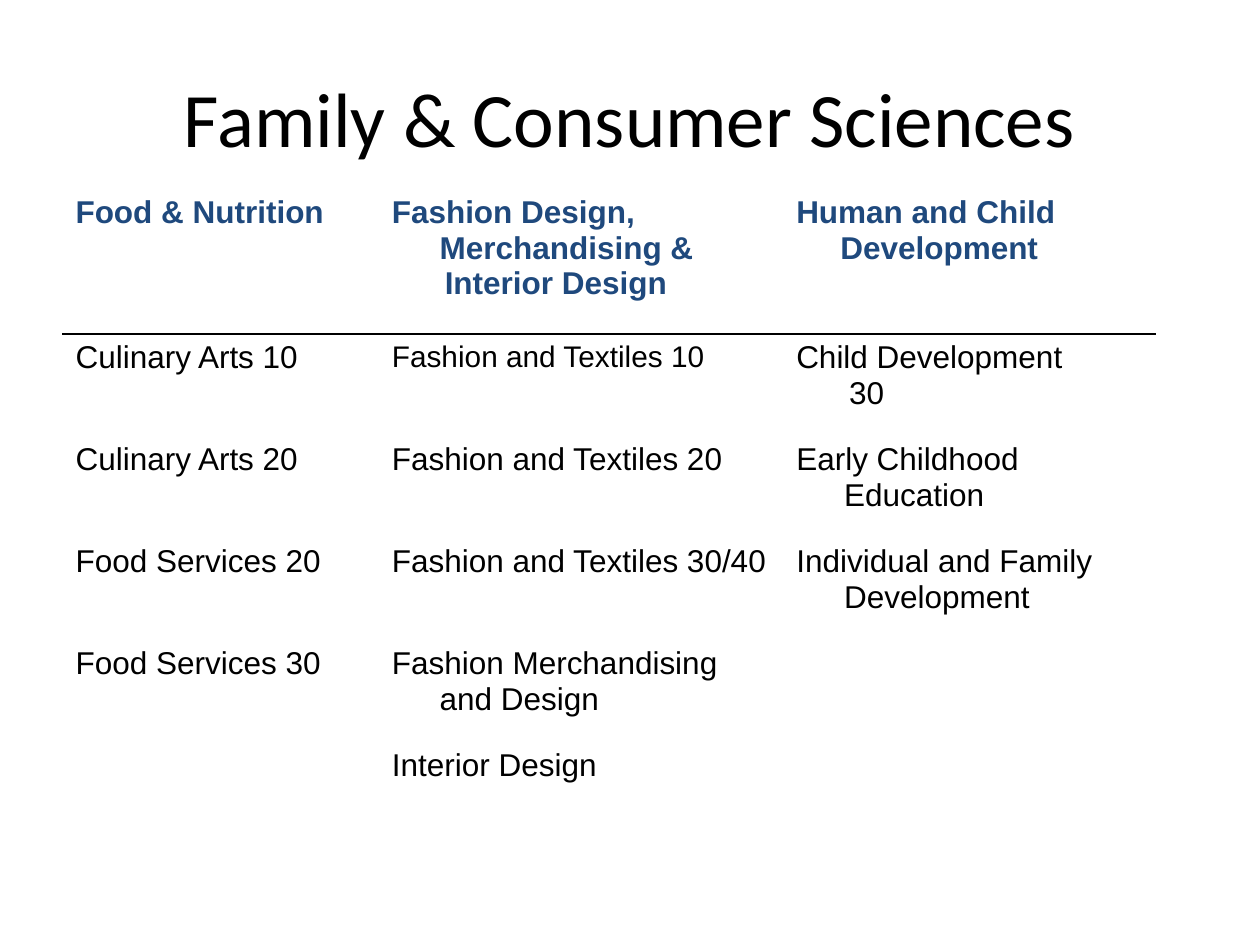
from lxml import etree
from pptx import Presentation
from pptx.dml.color import RGBColor
from pptx.enum.text import MSO_ANCHOR, PP_ALIGN
from pptx.oxml.ns import qn
from pptx.util import Inches, Pt

BLACK = RGBColor(0x00, 0x00, 0x00)
NAVY = RGBColor(0x1F, 0x49, 0x7D)
CENTER, MIDDLE = PP_ALIGN.CENTER, MSO_ANCHOR.MIDDLE

TITLE_ONLY = 5
HANGING = 0.38
TITLE_BOX = (0.5, 0.3, 9, 1.25)
TABLE_BOX = (0.5, 1.5, 8.67, 5)
COLUMN_WIDTHS = (2.51, 3.21, 2.95)
ROW_HEIGHTS = (1.15, 0.81, 0.81, 0.81, 0.81, 0.6)

# A cell is a list of paragraphs: (text, indent of a continuation or None)
COURSES = (
    ([("Food & Nutrition", None)],
     [("Fashion Design, Merchandising &", None), ("Interior Design", 0.42)],
     [("Human and Child", None), ("Development", 0.35)]),
    ([("Culinary Arts 10", None)],
     [("Fashion and Textiles 10", None)],
     [("Child Development", None), ("30", 0.42)]),
    ([("Culinary Arts 20", None)],
     [("Fashion and Textiles 20", None)],
     [("Early Childhood Education", None)]),
    ([("Food Services 20", None)],
     [("Fashion and Textiles 30/40", None)],
     [("Individual and Family Development", None)]),
    ([("Food Services 30", None)],
     [("Fashion Merchandising and Design", None)],
     []),
    ([], [("Interior Design", None)], []),
)
SMALLER_TEXT = {"Fashion and Textiles 10": 17}


def add_run(paragraph, text, font_name, size, color, bold=False):
    run = paragraph.add_run()
    run.text = text
    run.font.name = font_name
    run.font.size = Pt(size)
    run.font.bold = bold
    run.font.color.rgb = color


def set_border(cell, side):
    """Draw a thin black line on one side of a cell: lnT or lnB."""
    line = etree.Element(qn(f"a:{side}"), w=str(Pt(1)))
    fill = etree.SubElement(line, qn("a:solidFill"))
    etree.SubElement(fill, qn("a:srgbClr"), val=str(BLACK))
    cell._tc.get_or_add_tcPr().insert(0, line)


def fill_cell(cell, paragraphs, is_header):
    cell.fill.background()
    for index, (text, indent) in enumerate(paragraphs):
        frame = cell.text_frame
        paragraph = frame.add_paragraph() if index else frame.paragraphs[0]
        properties = paragraph._p.get_or_add_pPr()
        left = HANGING if indent is None else indent
        first_line = -HANGING if indent is None else 0
        properties.set("marL", str(Inches(left)))
        properties.set("indent", str(Inches(first_line)))
        add_run(paragraph, text, "Arial", SMALLER_TEXT.get(text, 18),
                NAVY if is_header else BLACK, is_header)


def place_title(slide, box, text):
    title = slide.shapes.title
    title.left, title.top, title.width, title.height = map(Inches, box)
    title.text_frame.vertical_anchor = MIDDLE
    paragraph = title.text_frame.paragraphs[0]
    paragraph.alignment = CENTER
    add_run(paragraph, text, "Calibri", 44, BLACK)


def add_course_table(slide, box):
    table = slide.shapes.add_table(
        len(ROW_HEIGHTS), len(COLUMN_WIDTHS), *map(Inches, box)).table
    table.first_row = False
    table.horz_banding = False
    for column, width in zip(table.columns, COLUMN_WIDTHS):
        column.width = Inches(width)
    for row_index, (row, height) in enumerate(zip(table.rows, ROW_HEIGHTS)):
        row.height = Inches(height)
        for cell, paragraphs in zip(row.cells, COURSES[row_index]):
            fill_cell(cell, paragraphs, row_index == 0)
            if row_index < 2:
                set_border(cell, "lnT" if row_index else "lnB")


def main():
    presentation = Presentation()
    presentation.slide_width = Inches(10)
    presentation.slide_height = Inches(7.5)
    layout = presentation.slide_layouts[TITLE_ONLY]
    slide = presentation.slides.add_slide(layout)
    place_title(slide, TITLE_BOX, "Family & Consumer Sciences")
    add_course_table(slide, TABLE_BOX)
    presentation.save("out.pptx")


if __name__ == "__main__":
    main()
